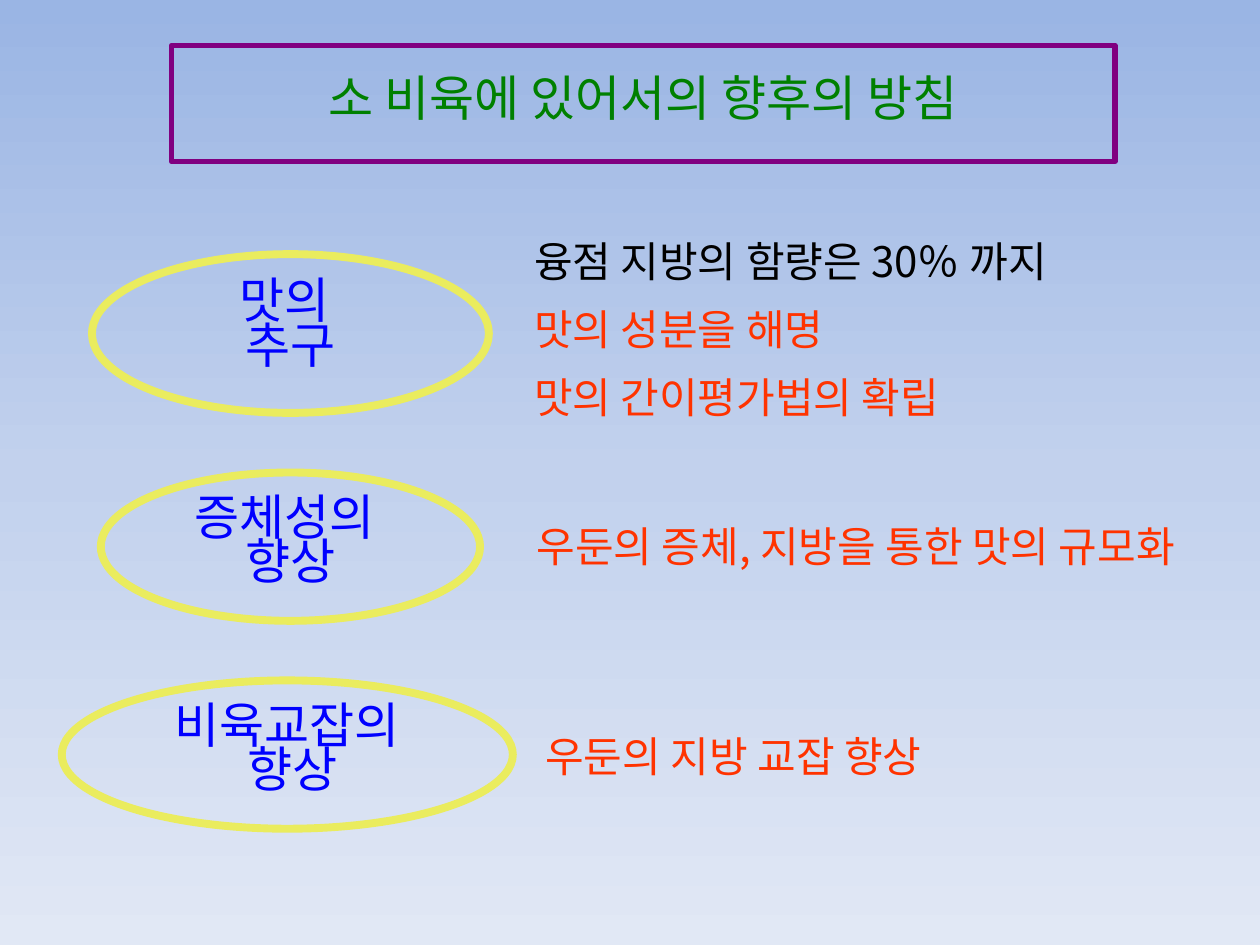
from copy import deepcopy

from lxml.etree import SubElement
from pptx import Presentation
from pptx.dml.color import RGBColor
from pptx.enum.shapes import MSO_SHAPE
from pptx.enum.text import MSO_ANCHOR, PP_ALIGN
from pptx.oxml.ns import qn
from pptx.util import Inches, Pt

WIDTH, HEIGHT = Inches(10), Inches(7.5)
COL, ROW = WIDTH / 100, HEIGHT / 100
FONT = "Noto Sans CJK JP"
GREEN = RGBColor(0x00, 0x80, 0x00)
PURPLE = RGBColor(0x80, 0x00, 0x80)
YELLOW = RGBColor(0xEA, 0xEC, 0x5E)
BLUE = RGBColor(0x00, 0x00, 0xFF)
BLACK = RGBColor(0x00, 0x00, 0x00)
RED = RGBColor(0xFF, 0x33, 0x00)
SKY = [
    (0, RGBColor(0x9A, 0xB5, 0xE4)),
    (0.5, RGBColor(0xC2, 0xD1, 0xED)),
    (1, RGBColor(0xE1, 0xE8, 0xF5)),
]
GOALS = [
    ((7.3, 26.9, 31.5, 16.8), ["맛의 ", "추구"]),
    ((8, 50, 30.1, 15.7), ["증체성의 ", "향상"]),
    ((4.9, 72, 35.8, 15.7), ["비육교잡의", " 향상"]),
]
MEASURES = [
    ((41.4, 19.6, 56, 31.5), [
        ("융점 지방의 함량은 30％ 까지", BLACK),
        ("맛의 성분을 해명", RED),
        ("맛의 간이평가법의 확립", RED),
    ]),
    ((41.6, 52.1, 65.1, 12.4), [("우둔의 증체, 지방을 통한 맛의 규모화", RED)]),
    ((42.3, 76.3, 49.1, 8.4), [("우둔의 지방 교잡 향상", RED)]),
]


def grid(box):
    """Turn left, top, width and height in grid units into lengths."""
    return [round(n * unit) for n, unit in zip(box, (COL, ROW, COL, ROW))]


def paint_background(s):
    """Fill the slide with the vertical three-stop gradient."""
    fill = s.background.fill
    fill.gradient()
    fill.gradient_angle = 270
    first = next(s.element.iter(qn("a:gs")))
    first.addnext(deepcopy(first))
    for stop, (position, color) in zip(fill.gradient_stops, SKY):
        stop.position = position
        stop.color.rgb = color


def write(sp, lines, size, align, anchor, gap=0):
    """Write one paragraph for each text and colour pair."""
    tf = sp.text_frame
    tf.word_wrap = True
    tf.vertical_anchor = anchor
    for i, (text, color) in enumerate(lines):
        p = tf.paragraphs[0] if i == 0 else tf.add_paragraph()
        layout = {"alignment": align, "line_spacing": 0.75,
                  "space_before": Pt(gap if i else 0)}
        for name, value in layout.items():
            setattr(p, name, value)
        r = p.add_run()
        r.text = text
        for name, value in {"name": FONT, "size": Pt(size)}.items():
            setattr(r.font, name, value)
        r.font.color.rgb = color
        SubElement(r.font._element, qn("a:ea")).set("typeface", FONT)


def add_outline(s, kind, box, color, width):
    """Add an unfilled shape with a coloured outline."""
    sp = s.shapes.add_shape(kind, *grid(box))
    sp.shadow.inherit = False
    sp.fill.background()
    sp.line.color.rgb = color
    sp.line.width = Pt(width)
    return sp


def add_title(s, text):
    """Add the framed heading."""
    sp = add_outline(s, MSO_SHAPE.RECTANGLE, (13.6, 4.8, 74.9, 12.3), PURPLE, 3)
    write(sp, [(text, GREEN)], 28, PP_ALIGN.CENTER, MSO_ANCHOR.MIDDLE)


def add_goal(s, box, lines):
    """Add an ellipse that names a goal."""
    sp = add_outline(s, MSO_SHAPE.OVAL, box, YELLOW, 4.5)
    write(sp, [(text, BLUE) for text in lines], 28, PP_ALIGN.CENTER, MSO_ANCHOR.TOP)


def add_measures(s, box, lines):
    """Add the measures that belong to a goal."""
    sp = s.shapes.add_textbox(*grid(box))
    write(sp, lines, 24, PP_ALIGN.LEFT, MSO_ANCHOR.MIDDLE, gap=17)


def main():
    """Build and save the slide."""
    prs = Presentation()
    prs.slide_width, prs.slide_height = WIDTH, HEIGHT
    s = prs.slides.add_slide(prs.slide_layouts[6])
    paint_background(s)
    add_title(s, "소 비육에 있어서의 향후의 방침")
    for box, lines in GOALS:
        add_goal(s, box, lines)
    for box, lines in MEASURES:
        add_measures(s, box, lines)
    prs.save("out.pptx")


if __name__ == "__main__":
    main()
